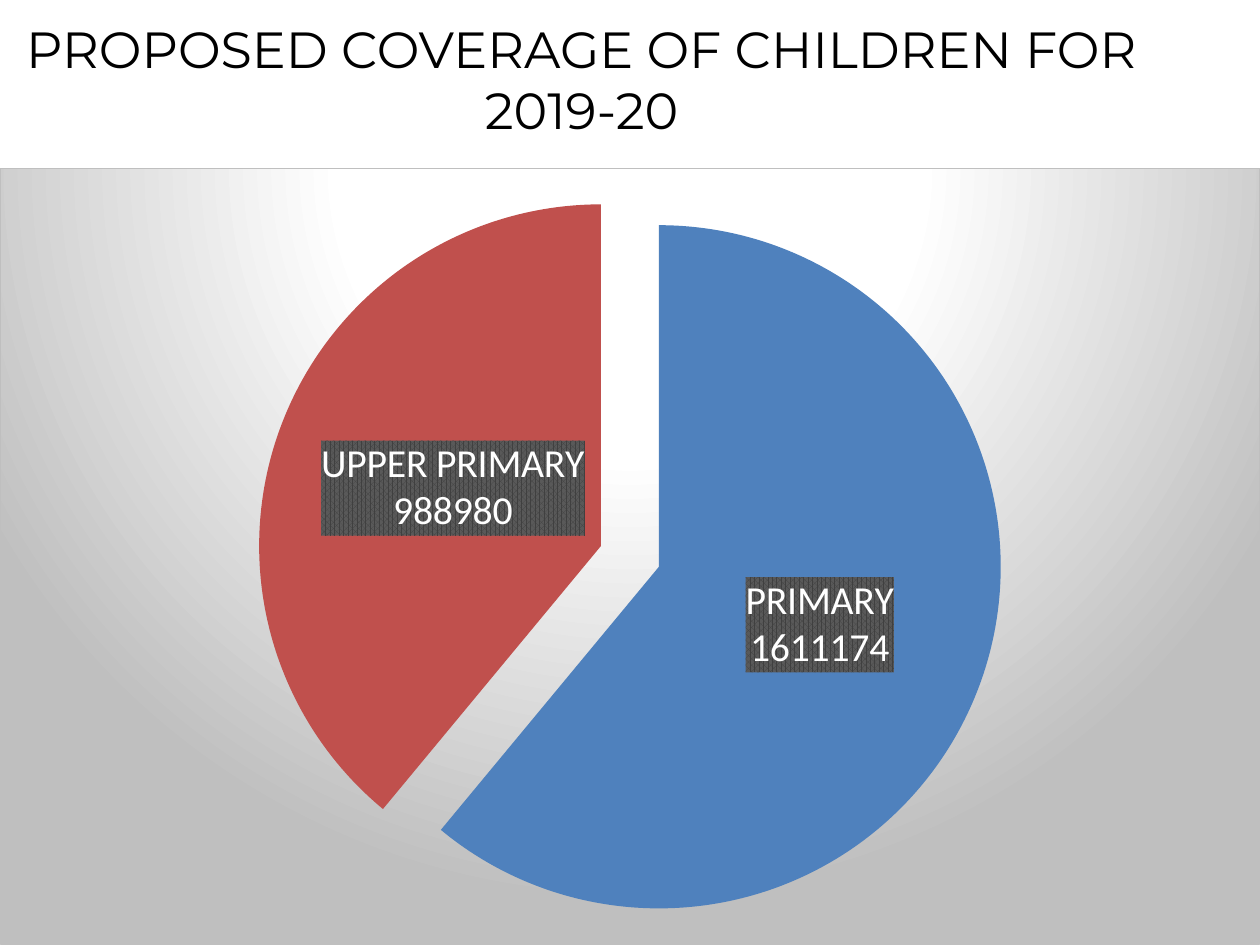
from dataclasses import dataclass
from lxml.etree import fromstring
from pptx import Presentation
from pptx.chart.data import CategoryChartData
from pptx.dml.color import RGBColor
from pptx.enum.chart import XL_CHART_TYPE, XL_LABEL_POSITION
from pptx.enum.text import MSO_ANCHOR, PP_ALIGN
from pptx.util import Cm, Inches, Pt

WIDE, HIGH = Cm(28), Cm(21)
COLS, ROWS = 60, 45
NS = ('xmlns:c="http://schemas.openxmlformats.org/drawingml/2006/chart" '
      'xmlns:a="http://schemas.openxmlformats.org/drawingml/2006/main"')


@dataclass(frozen=True)
class Theme:
    """Colours, fonts and type sizes."""
    ink: str = "000000"
    pale: str = "FFFFFF"
    edge: str = "BFBFBF"
    dark: str = "404040"
    mid: str = "595959"
    first: str = "4F81BD"
    second: str = "C0504D"
    head: str = "Montserrat"
    body: str = "Calibri"
    big: int = 32
    label: int = 25
    small: int = 10


THEME = Theme()
SLICES = [
    ("PRIMARY", 1595482, "1611174", THEME.first, 0),
    ("UPPER PRIMARY", 1019647, "988980", THEME.second, 0.01),
]


def place(col, row, cols, rows):
    """Turn grid columns and rows into lengths."""
    return (int(col * WIDE / COLS), int(row * HIGH / ROWS),
            int(cols * WIDE / COLS), int(rows * HIGH / ROWS))


def style(font, name, size, shade):
    """Set face, size and colour of a font."""
    font.name, font.size, font.bold = name, Pt(size), False
    font.color.rgb = RGBColor.from_string(shade)


def node(text):
    """Read a piece of chart XML."""
    return fromstring(text.replace(">", f" {NS}>", 1))


def tint(shade):
    """Give the XML of one plain colour."""
    return f'<a:srgbClr val="{shade}"/>'


def add_title(slide, text, box):
    """Add the centred heading."""
    frame = slide.shapes.add_textbox(*place(*box)).text_frame
    frame.word_wrap = True
    frame.vertical_anchor = MSO_ANCHOR.MIDDLE
    frame.margin_left = frame.margin_right = Inches(0.11)
    frame.margin_top = frame.margin_bottom = Inches(0.06)
    frame.text = text
    line = frame.paragraphs[0]
    line.alignment = PP_ALIGN.CENTER
    style(line.runs[0].font, THEME.head, THEME.big, THEME.ink)


def add_label(point, text, shift):
    """Write a label on a dark pattern near the middle of a slice."""
    label = point.data_label
    frame = label.text_frame
    frame.text = text
    for line in frame.paragraphs:
        line.alignment = PP_ALIGN.CENTER
        for run in line.runs:
            style(run.font, THEME.body, THEME.label, THEME.pale)
    label.position = XL_LABEL_POSITION.CENTER
    words = frame._txBody.getparent()
    words.addnext(node(
        '<c:spPr><a:pattFill prst="pct75">'
        f'<a:fgClr>{tint(THEME.dark)}</a:fgClr>'
        f'<a:bgClr>{tint(THEME.mid)}</a:bgClr>'
        '</a:pattFill><a:ln><a:noFill/></a:ln></c:spPr>'))
    if shift:
        words.addprevious(node(
            f'<c:layout><c:manualLayout><c:x val="{shift}"/>'
            '<c:y val="0"/></c:manualLayout></c:layout>'))


def add_glow(chart):
    """Give the chart a round gradient and a thin border."""
    stops = [(0, THEME.pale), (39, THEME.pale), (100, THEME.edge)]
    marks = "".join(f'<a:gs pos="{at * 1000}">{tint(shade)}</a:gs>'
                    for at, shade in stops)
    chart._chartSpace.chart.addnext(node(
        f'<c:spPr><a:gradFill><a:gsLst>{marks}</a:gsLst>'
        '<a:path path="circle"><a:fillToRect l="50000" t="-80000" '
        'r="50000" b="180000"/></a:path></a:gradFill>'
        f'<a:ln w="{Pt(0.75)}"><a:solidFill>{tint(THEME.edge)}'
        '</a:solidFill></a:ln></c:spPr>'))


def set_plot(chart, left, top, width, height):
    """Fix the plot area as shares of the chart."""
    area = chart._chartSpace.chart.plotArea
    for old in area.findall("{*}layout"):
        area.remove(old)
    sizes = {"x": left, "y": top, "w": width, "h": height}
    rows = "".join(f'<c:{key} val="{val}"/>' for key, val in sizes.items())
    area.insert(0, node(
        '<c:layout><c:manualLayout><c:layoutTarget val="inner"/>'
        '<c:xMode val="edge"/><c:yMode val="edge"/>'
        f'{rows}</c:manualLayout></c:layout>'))


def add_pie(slide, box):
    """Add the split pie with its labels."""
    data = CategoryChartData()
    data.categories = [name for name, *_ in SLICES]
    data.add_series("Series 1", [value for _, value, *_ in SLICES])
    chart = slide.shapes.add_chart(
        XL_CHART_TYPE.PIE_EXPLODED, *place(*box), data).chart
    chart.has_title = chart.has_legend = False
    style(chart.font, THEME.body, THEME.small, THEME.ink)
    plot = chart.plots[0]
    plot.vary_by_categories = True
    series = plot.series[0]
    for burst in series._element.findall("{*}explosion"):
        burst.set("val", "9")
    for spot, (name, _, count, shade, shift) in enumerate(SLICES):
        point = series.points[spot]
        point.format.fill.solid()
        point.format.fill.fore_color.rgb = RGBColor.from_string(shade)
        add_label(point, f"{name}\n{count}", shift)
    labels = series.data_labels
    labels.show_value = labels.show_category_name = True
    labels.position = XL_LABEL_POSITION.CENTER
    style(labels.font, THEME.body, THEME.label, THEME.pale)
    for lead in series._element.iter("{*}showLeaderLines"):
        lead.set("val", "0")
    add_glow(chart)
    set_plot(chart, 0.2, 0.02, 0.6, 0.96)


def main():
    """Build and save the slide."""
    deck = Presentation()
    deck.slide_width, deck.slide_height = WIDE, HIGH
    slide = deck.slides.add_slide(deck.slide_layouts[6])
    add_title(slide, "PROPOSED COVERAGE OF CHILDREN FOR 2019-20",
              (0, 0, 55.4, 7.5))
    add_pie(slide, (0, 8, 60, 37))
    deck.save("out.pptx")


if __name__ == "__main__":
    main()
